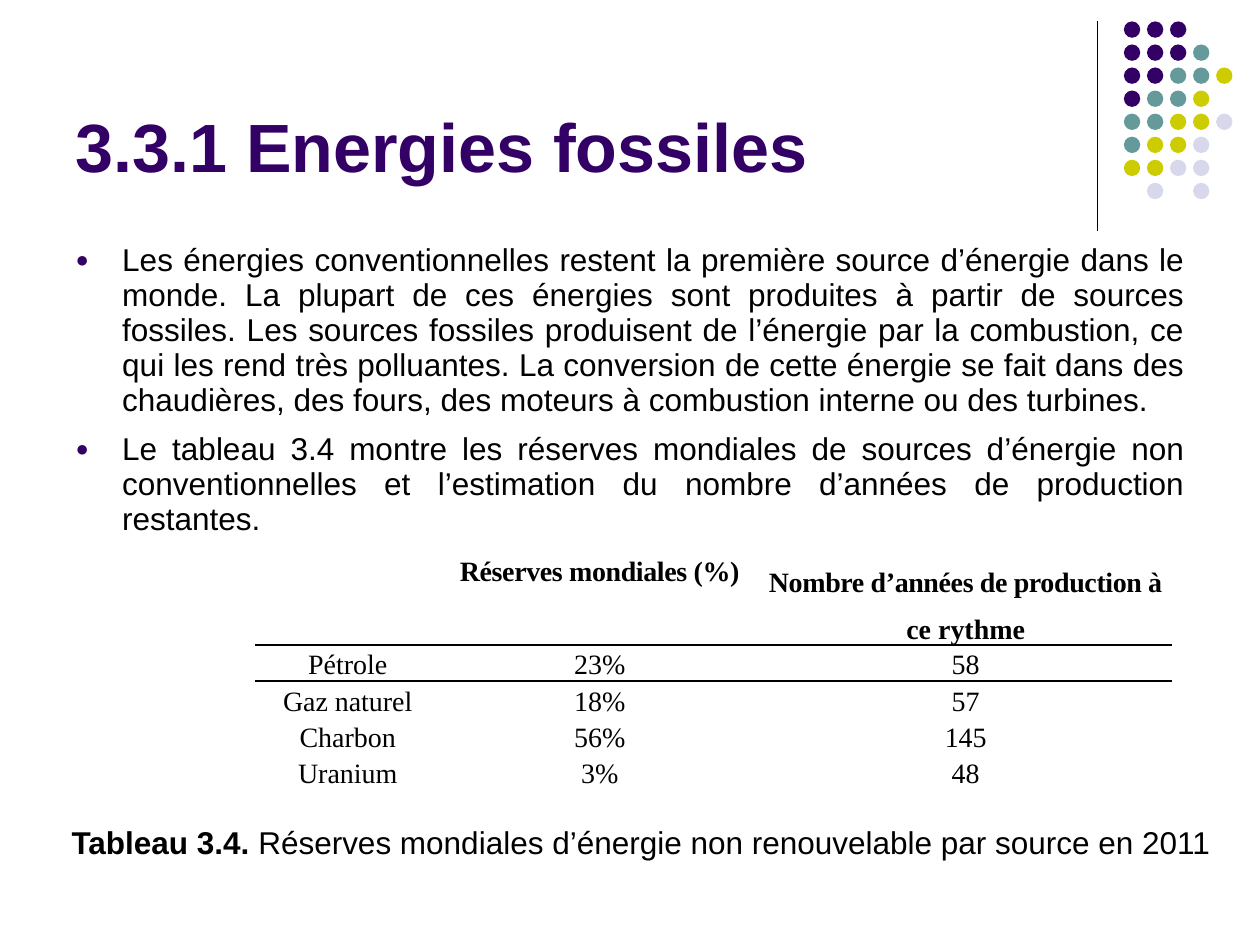
from lxml.etree import SubElement
from pptx import Presentation
from pptx.dml.color import RGBColor
from pptx.enum.shapes import MSO_CONNECTOR, MSO_SHAPE
from pptx.enum.text import MSO_ANCHOR, MSO_AUTO_SIZE, PP_ALIGN
from pptx.oxml.ns import qn
from pptx.util import Inches, Pt

PURPLE = RGBColor(0x33, 0x00, 0x66)
TEAL = RGBColor(0x66, 0x99, 0x99)
OLIVE = RGBColor(0xCC, 0xCC, 0x00)
LAVENDER = RGBColor(0xD8, 0xD8, 0xEC)
BLACK = RGBColor(0x00, 0x00, 0x00)

DOT_COLORS = {"P": PURPLE, "T": TEAL, "O": OLIVE, "L": LAVENDER}
DOT_ROWS = ["PPP", "PPPT", "PPTTO", "PTTO", "TTOOL", "TOOL", "OOLL", " L L"]

TITLE = "3.3.1 Energies fossiles"
BULLETS = [
    "Les énergies conventionnelles restent la première source d’énergie dans le "
    "monde. La plupart de ces énergies sont produites à partir de sources fossiles. "
    "Les sources fossiles produisent de l’énergie par la combustion, ce qui les rend "
    "très polluantes. La conversion de cette énergie se fait dans des chaudières, des "
    "fours, des moteurs à combustion interne ou des turbines.",
    "Le tableau 3.4 montre les réserves mondiales de sources d’énergie non "
    "conventionnelles et l’estimation du nombre d’années de production restantes.",
]
RESERVES = [
    ("", "Réserves mondiales (%)", "Nombre d’années de production à\vce rythme"),
    ("Pétrole", "23%", "58"),
    ("Gaz naturel", "18%", "57"),
    ("Charbon", "56%", "145"),
    ("Uranium", "3%", "48"),
]
COL_WIDTHS = [1.46, 2.54, 3.27]
ROW_HEIGHTS = [0.61, 0.25, 0.29, 0.29, 0.26]


def place(sp, left, top, width, height):
    sp.left, sp.top = Inches(left), Inches(top)
    sp.width, sp.height = Inches(width), Inches(height)


def style_runs(p, size, color=BLACK, bold=False, name="Arial"):
    for r in p.runs:
        r.font.name, r.font.size, r.font.bold = name, Pt(size), bold
        r.font.color.rgb = color


def add_divider(slide):
    line = slide.shapes.add_connector(
        MSO_CONNECTOR.STRAIGHT, Inches(8.71), Inches(0.17), Inches(8.71), Inches(1.83))
    line.line.color.rgb = BLACK
    line.line.width = Pt(0.75)
    SubElement(line._element.spPr, qn("a:effectLst"))


def add_dots(slide):
    group = slide.shapes.add_group_shape()
    pitch, size = 0.183, Inches(0.13)
    for row, codes in enumerate(DOT_ROWS):
        for col, code in enumerate(codes):
            if code not in DOT_COLORS:
                continue
            dot = group.shapes.add_shape(
                MSO_SHAPE.OVAL, Inches(8.92 + col * pitch),
                Inches(0.17 + row * pitch), size, size)
            dot.shadow.inherit = False
            dot.fill.solid()
            dot.fill.fore_color.rgb = DOT_COLORS[code]
            dot.line.fill.background()


def fill_title(sp):
    place(sp, 0.5, 0.13, 8.25, 1.41)
    tf = sp.text_frame
    tf.text = TITLE
    tf.auto_size = MSO_AUTO_SIZE.NONE
    tf.vertical_anchor = MSO_ANCHOR.BOTTOM
    p = tf.paragraphs[0]
    p.alignment, p.line_spacing = PP_ALIGN.LEFT, 0.93
    style_runs(p, 39, PURPLE, bold=True)


def set_bullet(p):
    pPr = p._p.get_or_add_pPr()
    pPr.set("marL", str(Inches(0.37)))
    pPr.set("indent", str(-Inches(0.37)))
    color = SubElement(pPr, qn("a:buClr"))
    SubElement(color, qn("a:srgbClr"), val=str(PURPLE))
    SubElement(pPr, qn("a:buSzPct"), val="70000")
    SubElement(pPr, qn("a:buFont"), typeface="Arial")
    SubElement(pPr, qn("a:buChar"), char="●")


def fill_body(sp):
    place(sp, 0.5, 1.88, 9, 2.49)
    tf = sp.text_frame
    tf.text = "\n".join(BULLETS)
    tf.auto_size = MSO_AUTO_SIZE.NONE
    for p in tf.paragraphs:
        p.alignment, p.line_spacing = PP_ALIGN.JUSTIFY, 0.93
        p.space_before = Pt(7.5)
        set_bullet(p)
        style_runs(p, 18)


def set_border(cell, side):
    tcPr = cell._tc.get_or_add_tcPr()
    ln = SubElement(tcPr, qn(f"a:{side}"), w=str(Pt(1.5)))
    fill = SubElement(ln, qn("a:solidFill"))
    SubElement(fill, qn("a:srgbClr"), val=str(BLACK))


def fill_cell(cell, text, header, line_spacing):
    cell.margin_left = cell.margin_right = cell.margin_top = cell.margin_bottom = 0
    cell.vertical_anchor = MSO_ANCHOR.TOP if header else MSO_ANCHOR.MIDDLE
    p = cell.text_frame.paragraphs[0]
    p.text = text
    p.alignment, p.line_spacing = PP_ALIGN.CENTER, line_spacing
    style_runs(p, 16, bold=header, name="Times New Roman")
    if header and p.runs:
        p.runs[0].font._element.set("spc", "-20")


def add_reserves_table(slide):
    frame = slide.shapes.add_table(
        len(RESERVES), len(COL_WIDTHS), Inches(2.03), Inches(4.38),
        Inches(sum(COL_WIDTHS)), Inches(sum(ROW_HEIGHTS)))
    table = frame.table
    table.first_row = table.horz_banding = False
    for column, width in zip(table.columns, COL_WIDTHS):
        column.width = Inches(width)
    for i, (row, height) in enumerate(zip(table.rows, ROW_HEIGHTS)):
        row.height = Inches(height)
        for j, cell in enumerate(row.cells):
            fill_cell(cell, RESERVES[i][j], i == 0, 1.5 if (i, j) == (0, 2) else 1.15)
            # Rule between the header and the first data row
            if i < 2:
                set_border(cell, "lnT" if i else "lnB")
            cell.fill.background()


def add_caption(slide):
    box = slide.shapes.add_textbox(Inches(0.47), Inches(6.48), Inches(9.53), Inches(0.4))
    tf = box.text_frame
    tf.word_wrap = True
    tf.auto_size = MSO_AUTO_SIZE.SHAPE_TO_FIT_TEXT
    p = tf.paragraphs[0]
    p.add_run().text = "Tableau 3.4."
    p.add_run().text = " Réserves mondiales d’énergie non renouvelable par source en 2011"
    style_runs(p, 18)
    p.runs[0].font.bold = True


def main():
    prs = Presentation()
    prs.slide_width, prs.slide_height = Inches(10), Inches(7.5)
    slide = prs.slides.add_slide(prs.slide_layouts[1])
    # Corner decoration
    add_divider(slide)
    add_dots(slide)
    # Content
    fill_title(slide.shapes.title)
    fill_body(slide.placeholders[1])
    add_reserves_table(slide)
    add_caption(slide)
    prs.save("out.pptx")


if __name__ == "__main__":
    main()
